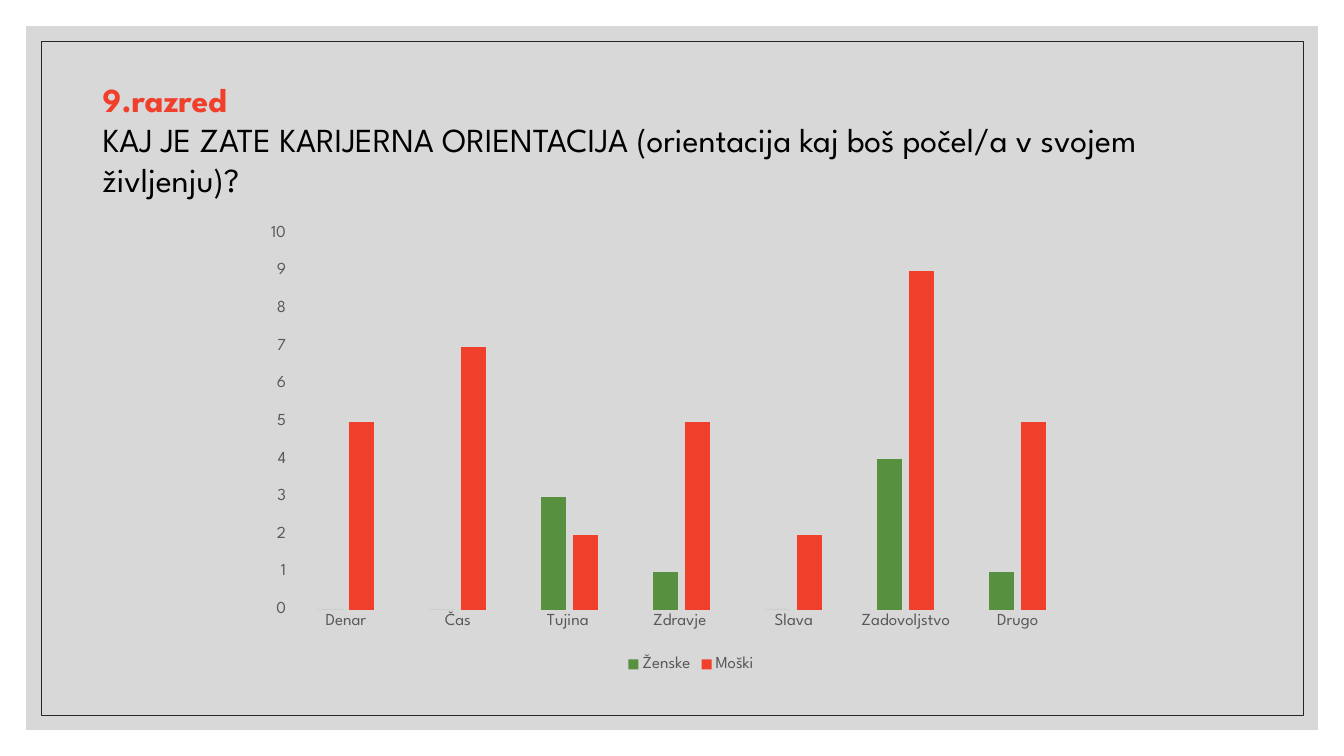
from lxml.etree import SubElement
from pptx import Presentation
from pptx.chart.data import CategoryChartData
from pptx.dml.color import RGBColor
from pptx.enum.chart import XL_CHART_TYPE, XL_LEGEND_POSITION, XL_TICK_MARK
from pptx.enum.shapes import MSO_SHAPE
from pptx.oxml.ns import qn
from pptx.util import Pt

FONT = "League Spartan"
RED = RGBColor(0xF0, 0x3F, 0x2B)
GREEN = RGBColor(0x57, 0x90, 0x3F)
BLACK = RGBColor(0x00, 0x00, 0x00)
PANEL_GRAY = RGBColor(0xBF, 0xBF, 0xBF)
FRAME_GRAY = RGBColor(0x26, 0x26, 0x26)
LABEL_GRAY = RGBColor(0x59, 0x59, 0x59)
GRID_GRAY = RGBColor(0xD9, 0xD9, 0xD9)

SLIDE_WIDTH, SLIDE_HEIGHT = 960, 540
CATEGORIES = ["Denar", "Čas", "Tujina ", "Zdravje ", "Slava", "Zadovoljstvo", "Drugo"]
SERIES = [
    ("Ženske", [0, 0, 3, 1, 0, 4, 1], GREEN),
    ("Moški", [5, 7, 2, 5, 2, 9, 5], RED),
]
PLOT_LAYOUT = {"x": 0.04, "y": 0.173, "w": 0.899, "h": 0.703}


def format_font(font, size, color, bold=False):
    font.name = FONT
    font.size = Pt(size)
    font.bold = bold
    font.color.rgb = color


def add_inset_rectangle(slide, margin):
    """Add a bare rectangle at the same distance from every slide edge."""
    shape = slide.shapes.add_shape(
        MSO_SHAPE.RECTANGLE, Pt(margin), Pt(margin),
        Pt(SLIDE_WIDTH - 2 * margin), Pt(SLIDE_HEIGHT - 2 * margin))
    shape.shadow.inherit = False
    return shape


def add_panel(slide):
    panel = add_inset_rectangle(slide, 18.7)
    panel.fill.solid()
    panel.fill.fore_color.rgb = PANEL_GRAY
    panel.line.fill.background()
    color = panel.fill._xPr.find(qn("a:solidFill"))[0]
    SubElement(color, qn("a:alpha")).set("val", "60000")


def add_frame(slide):
    frame = add_inset_rectangle(slide, 29.3)
    frame.fill.background()
    frame.line.color.rgb = FRAME_GRAY
    frame.line.width = Pt(0.5)


def add_paragraph(paragraph, text, size=24, color=BLACK, bold=False):
    run = paragraph.add_run()
    run.text = text
    format_font(run.font, size, color, bold)


def add_heading(slide):
    text_box = slide.shapes.add_textbox(Pt(66.3), Pt(52.6), Pt(794), Pt(94.3))
    frame = text_box.text_frame
    frame.word_wrap = True
    add_paragraph(frame.paragraphs[0], "9.razred", color=RED, bold=True)
    add_paragraph(
        frame.add_paragraph(),
        "KAJ JE ZATE KARIJERNA ORIENTACIJA "
        "(orientacija kaj boš počel/a v svojem življenju)?")


def format_axis(axis):
    axis.major_tick_mark = XL_TICK_MARK.NONE
    axis.minor_tick_mark = XL_TICK_MARK.NONE
    format_font(axis.tick_labels.font, 12, LABEL_GRAY)


def format_gray_line(line):
    line.color.rgb = GRID_GRAY
    line.width = Pt(0.75)


def set_plot_layout(chart):
    """Fix the inner plot area as fractions of the chart frame."""
    plot_area = chart._chartSpace.chart.plotArea
    layout = plot_area.find(qn("c:layout"))
    if layout is None:
        layout = SubElement(plot_area, qn("c:layout"))
        plot_area.insert(0, layout)
    manual = SubElement(layout, qn("c:manualLayout"))
    settings = {"layoutTarget": "inner", "xMode": "edge", "yMode": "edge", **PLOT_LAYOUT}
    for name, value in settings.items():
        SubElement(manual, qn(f"c:{name}")).set("val", str(value))


def add_answer_chart(slide):
    data = CategoryChartData()
    data.categories = CATEGORIES
    for name, values, _ in SERIES:
        data.add_series(name, values)
    chart = slide.shapes.add_chart(
        XL_CHART_TYPE.COLUMN_CLUSTERED,
        Pt(182.2), Pt(100.8), Pt(622.8), Pt(382.3), data).chart
    chart.has_title = False
    format_font(chart.font, 10, BLACK)

    plot = chart.plots[0]
    plot.gap_width = 219
    plot.overlap = -27
    plot.vary_by_categories = False
    for series, (_, _, color) in zip(plot.series, SERIES):
        series.format.fill.solid()
        series.format.fill.fore_color.rgb = color
        series.invert_if_negative = False

    format_axis(chart.category_axis)
    format_gray_line(chart.category_axis.format.line)
    value_axis = chart.value_axis
    format_axis(value_axis)
    value_axis.minimum_scale = 0
    value_axis.maximum_scale = 10
    value_axis.major_unit = 1
    value_axis.format.line.fill.background()
    format_gray_line(value_axis.major_gridlines.format.line)

    chart.has_legend = True
    chart.legend.position = XL_LEGEND_POSITION.BOTTOM
    chart.legend.include_in_layout = False
    format_font(chart.legend.font, 12, LABEL_GRAY)
    set_plot_layout(chart)


def main():
    presentation = Presentation()
    presentation.slide_width = Pt(SLIDE_WIDTH)
    presentation.slide_height = Pt(SLIDE_HEIGHT)
    slide = presentation.slides.add_slide(presentation.slide_layouts[6])
    add_panel(slide)
    add_frame(slide)
    add_heading(slide)
    add_answer_chart(slide)
    presentation.save("out.pptx")


if __name__ == "__main__":
    main()
